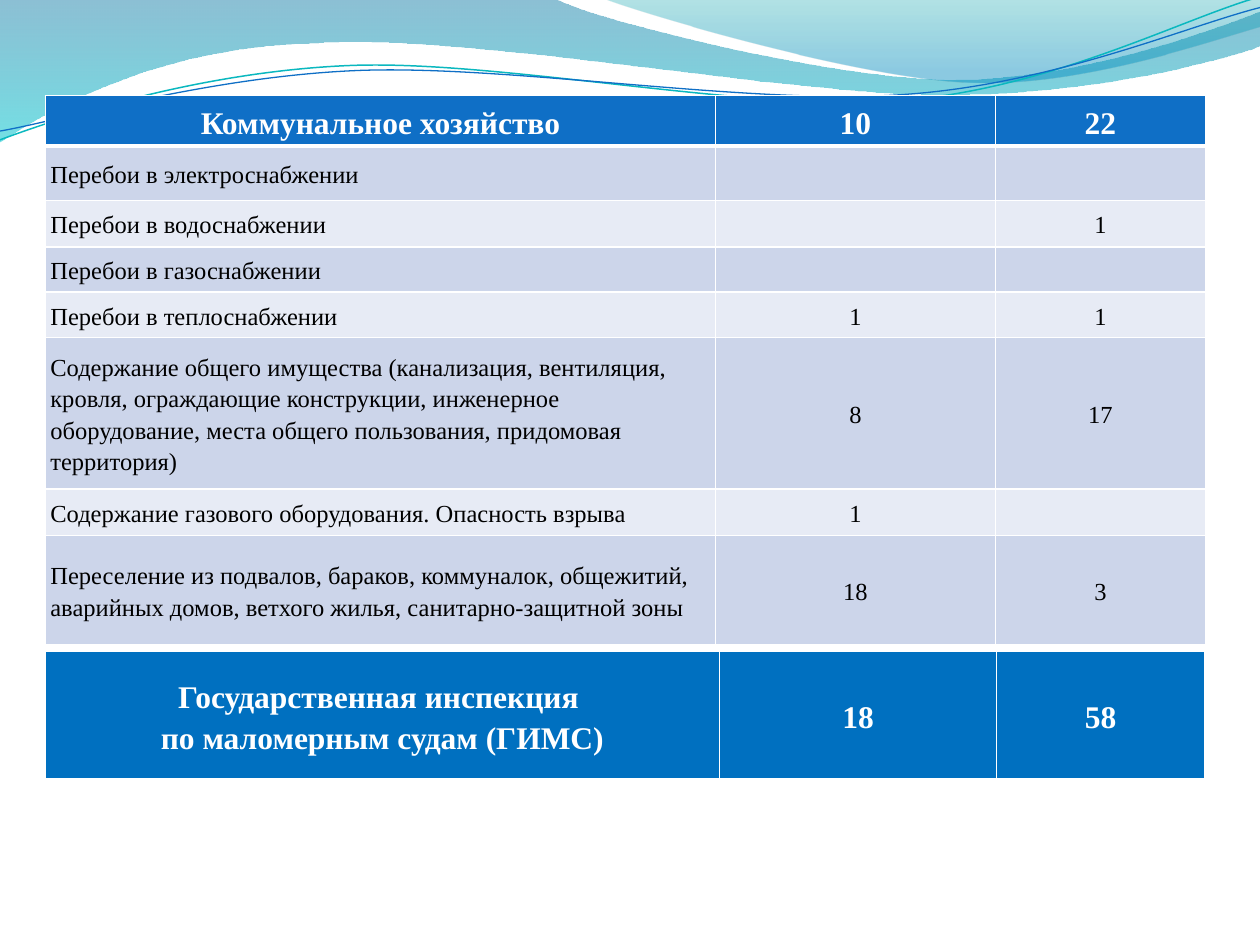
from math import cos, radians, sin

from lxml.etree import SubElement
from pptx import Presentation
from pptx.dml.color import RGBColor
from pptx.enum.text import MSO_ANCHOR, PP_ALIGN
from pptx.oxml.ns import qn
from pptx.util import Inches, Pt

COLORS = {
    "white": "FFFFFF", "black": "000000", "head": "0F6FC6", "total": "0070C0",
    "dark": "CCD5EA", "light": "E7EBF5", "teal": "0AB8BF",
    "sea": "0074A1", "aqua": "00C6CF", "green": "00A1A9", "blue": "008BBF",
}
ROWS = [
    (0.4, "Коммунальное хозяйство", "10", "22"),
    (0.43, "Перебои в электроснабжении", "", ""),
    (0.37, "Перебои в водоснабжении", "", "1"),
    (0.36, "Перебои в газоснабжении", "", ""),
    (0.36, "Перебои в теплоснабжении", "1", "1"),
    (1.2, "Содержание общего имущества (канализация, вентиляция, кровля, "
     "ограждающие конструкции, инженерное оборудование, места общего "
     "пользования, придомовая территория)", "8", "17"),
    (0.37, "Содержание газового оборудования. Опасность взрыва", "1", ""),
    (0.87, "Переселение из подвалов, бараков, коммуналок, общежитий, аварийных "
     "домов, ветхого жилья, санитарно-защитной зоны", "18", "3"),
]
TOTAL = [(1.02, "Государственная инспекция \nпо маломерным судам (ГИМС)", "18", "58")]
BANDS = [
    ([(0, 0), (4.4, -0.01),
      (4.76, 0.17, 6.64, 0.63, 7.58, 0.63), (8.53, 0.63, 9.58, 0.26, 10, 0.09),
      (10.01, 0.36), (9.83, 0.44, 8.7, 0.76, 7.46, 0.75),
      (6.22, 0.75, 3.82, 0.28, 2.57, 0.34), (1.29, 0.36, 0.46, 0.83, -0.01, 1.13)],
     [("sea", 0, 45), ("aqua", 1, 55)]),
    ([(4.79, -0.01), (5.09, 0.11, 6.82, 0.62, 7.69, 0.65),
      (8.56, 0.69, 9.61, 0.32, 10, 0.21), (10, 0)],
     [("green", 0, 30), ("blue", 0.8, 45)]),
]
LINES = [
    ([(0, 1.11), (0.48, 0.93, 1.58, 0.57, 2.77, 0.52),
      (3.95, 0.47, 5.93, 0.89, 7.13, 0.8), (8.33, 0.71, 9.38, 0.15, 9.98, -0.02)],
     "teal", 0.85),
    ([(0, 1.04), (0.47, 0.96, 1.64, 0.61, 2.83, 0.56),
      (4.03, 0.51, 5.97, 0.84, 7.17, 0.75), (8.36, 0.67, 9.41, 0.21, 10, 0.06)],
     "head", 0.75),
]
TILT = -2.7
HUB = (4.99, 0.58)


def color(name):
    """Return a named colour."""
    return RGBColor.from_string(COLORS[name])


def turn(x, y, angle):
    """Turn a point about the hub by an angle in degrees."""
    a, dx, dy = radians(angle), x - HUB[0], y - HUB[1]
    return HUB[0] + dx * cos(a) - dy * sin(a), HUB[1] + dx * sin(a) + dy * cos(a)


def add_curve(slide, left, top, route, closed, tilt=0):
    """Draw an outline of straight and cubic segments."""
    points = [turn(x, y, -tilt) for seg in route for x, y in zip(seg[::2], seg[1::2])]
    points = [(Inches(left + x), Inches(top + y)) for x, y in points]
    maker = slide.shapes.build_freeform(*points[0])
    maker.add_line_segments(points[1:], close=closed)
    shape = maker.convert_to_shape()
    shape.rotation = tilt
    shape.shadow.inherit = False
    steps = iter(list(shape._element.iter(qn("a:lnTo"))))
    for seg in route[1:]:
        step = next(steps)
        if len(seg) == 6:
            cubic = step.getparent().makeelement(qn("a:cubicBezTo"))
            step.addprevious(cubic)
            for part in (step, next(steps), next(steps)):
                cubic.append(part[0])
                part.getparent().remove(part)
    return shape


def add_waves(slide, left, top):
    """Draw the shaded bands and thin lines of the header."""
    for route, stops in BANDS:
        band = add_curve(slide, left, top, route, True)
        band.line.fill.background()
        band.fill.gradient()
        band.fill.gradient_angle = 270
        for stop, (name, place, alpha) in zip(band.fill.gradient_stops, stops):
            stop.color.rgb = color(name)
            stop.position = place
            tint = stop.color._xFill.find(qn("a:srgbClr"))
            SubElement(tint, qn("a:alpha"), val=str(alpha * 1000))
    for route, name, width in LINES:
        wave = add_curve(slide, left, top, route, False, TILT)
        wave.fill.background()
        wave.line.color.rgb = color(name)
        wave.line.width = Pt(width)


def set_edges(cell, above, below):
    """Give a cell white edges, with the top and bottom widths in points."""
    props = cell._tc.get_or_add_tcPr()
    for side, width in (("L", 1), ("R", 1), ("T", above), ("B", below)):
        edge = SubElement(props, qn("a:ln" + side), w=str(Pt(width)))
        fill = SubElement(edge, qn("a:solidFill"))
        SubElement(fill, qn("a:srgbClr"), val=COLORS["white"])


def fill_cell(cell, text, fill, strong, center):
    """Write and format one cell."""
    cell.fill.solid()
    cell.fill.fore_color.rgb = color(fill)
    cell.vertical_anchor = MSO_ANCHOR.MIDDLE
    cell.margin_left = cell.margin_right = Inches(0.04)
    cell.margin_top = cell.margin_bottom = Inches(0.04)
    cell.text = text
    size = 18 if strong else 14
    for para in cell.text_frame.paragraphs:
        para.alignment = PP_ALIGN.CENTER if center else PP_ALIGN.LEFT
        para.line_spacing = 1.15
        para.font.name = "Times New Roman"
        para.font.size = Pt(size)
        para.font.bold = strong
        para.font.color.rgb = color("white" if strong else "black")
        if not text:
            para._p.get_or_add_endParaRPr().set("sz", str(size * 100))


def add_grid(slide, left, top, widths, rows, head):
    """Place a table whose first row is strong and the rest banded."""
    box = [Inches(n) for n in (left, top, sum(widths), sum(r[0] for r in rows))]
    table = slide.shapes.add_table(len(rows), len(widths), *box).table
    for col, width in zip(table.columns, widths):
        col.width = Inches(width)
    for i, (height, *texts) in enumerate(rows):
        table.rows[i].height = Inches(height)
        fill = ("light", "dark")[i % 2] if i else head
        for j, text in enumerate(texts):
            cell = table.cell(i, j)
            set_edges(cell, 3 if i == 1 else 1, 1 if i else 3)
            fill_cell(cell, text, fill, i == 0, i == 0 or j > 0)


def main():
    """Build and save the slide."""
    deck = Presentation()
    deck.slide_width, deck.slide_height = Inches(10), Inches(7.5)
    slide = deck.slides.add_slide(deck.slide_layouts[6])
    add_waves(slide, 0, 0)
    add_grid(slide, 0.36, 0.76, (5.32, 2.22, 1.67), ROWS, "head")
    add_grid(slide, 0.36, 5.17, (5.35, 2.2, 1.65), TOTAL, "total")
    deck.save("out.pptx")


if __name__ == "__main__":
    main()
